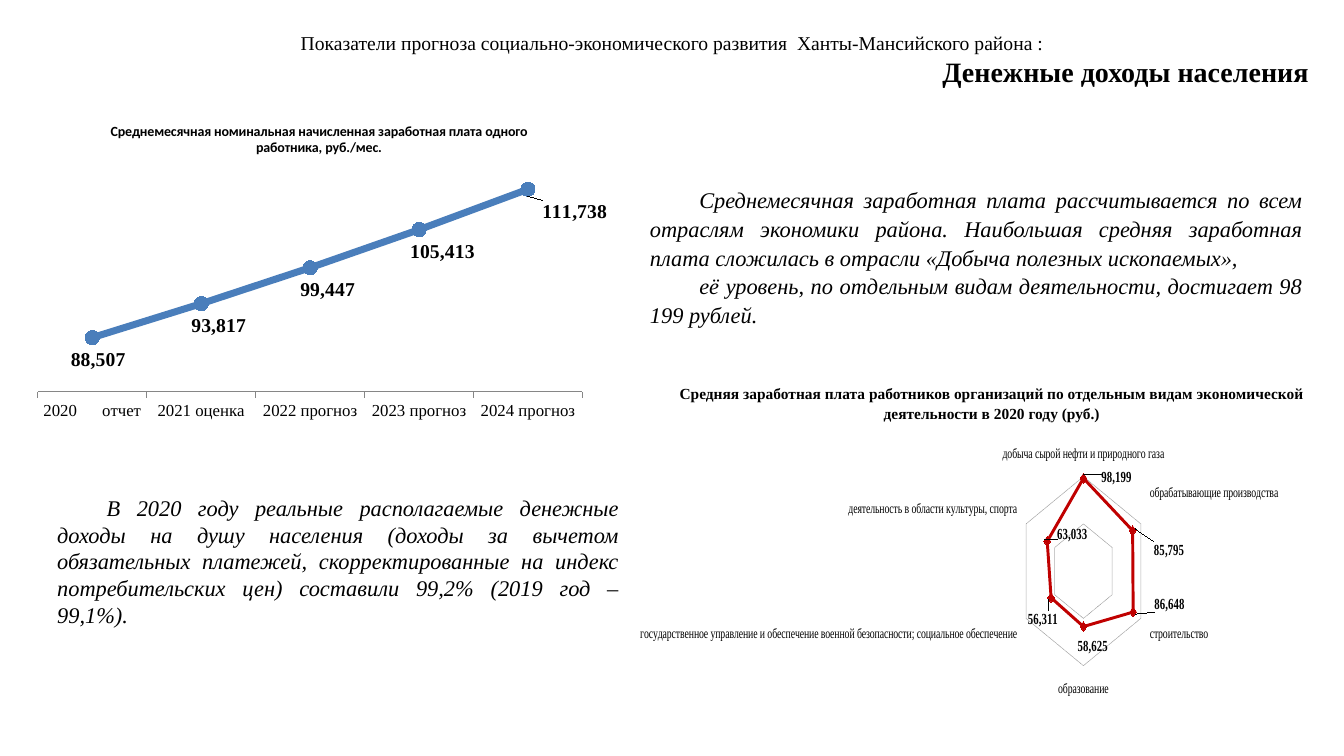
from dataclasses import dataclass

from lxml import etree
from pptx import Presentation
from pptx.chart.data import CategoryChartData
from pptx.dml.color import RGBColor
from pptx.enum.chart import XL_CHART_TYPE, XL_LABEL_POSITION, XL_MARKER_STYLE, XL_TICK_MARK
from pptx.enum.dml import MSO_LINE
from pptx.enum.text import MSO_ANCHOR, PP_ALIGN
from pptx.oxml.ns import qn
from pptx.util import Pt

LINE_CHART = XL_CHART_TYPE.LINE_MARKERS
RADAR_CHART = XL_CHART_TYPE.RADAR_MARKERS
BELOW = XL_LABEL_POSITION.BELOW
CIRCLE, DIAMOND = XL_MARKER_STYLE.CIRCLE, XL_MARKER_STYLE.DIAMOND
TICK_NONE, TICK_OUT = XL_TICK_MARK.NONE, XL_TICK_MARK.OUTSIDE
DOTTED = MSO_LINE.ROUND_DOT
CENTER, RIGHT, JUSTIFY = PP_ALIGN.CENTER, PP_ALIGN.RIGHT, PP_ALIGN.JUSTIFY
TOP, MIDDLE = MSO_ANCHOR.TOP, MSO_ANCHOR.MIDDLE


@dataclass(frozen=True)
class Theme:
    serif: str = "Times New Roman"
    sans: str = "Calibri"
    ink: RGBColor = RGBColor(0, 0, 0)
    blue: RGBColor = RGBColor(0x4A, 0x7E, 0xBB)
    red: RGBColor = RGBColor(0xC0, 0, 0)
    grey: RGBColor = RGBColor(0x86, 0x86, 0x86)
    heading: int = 20
    body: int = 16
    subject: int = 14
    axis: int = 12
    caption: int = 11
    small: int = 10


THEME = Theme()

WAGES = {
    "2020      отчет": 88507,
    "2021 оценка": 93817,
    "2022 прогноз": 99447,
    "2023 прогноз": 105413,
    "2024 прогноз": 111738,
}
SECTORS = {
    "добыча сырой нефти и природного газа": 98199,
    "обрабатывающие производства\n": 85795,
    "строительство": 86648,
    "образование": 58625,
    "государственное управление и обеспечение военной безопасности; социальное обеспечение": 56311,
    "деятельность в области культуры, спорта": 63033,
}
# Label shifts as fractions of the chart's width and height
WAGE_SHIFTS = [(0.01, 0), (0.03, 0), (0.03, 0), (0.04, 0), (0.08, 0)]
SECTOR_SHIFTS = [(0.07, 0.04), (0.04, 0.08), (0.04, -0.05),
                 (0.02, 0.01), (0.02, 0.03), (0.09, 0.01)]


def style_font(font, size, name=THEME.serif, bold=False, italic=False):
    font.name, font.size, font.bold, font.italic = name, Pt(size), bold, italic
    font.color.rgb = THEME.ink


def add_text(slide, box, lines, align, indent=0, spacing=1.0, anchor=TOP):
    """Each line is (text, size, bold, italic)."""
    frame = slide.shapes.add_textbox(*map(Pt, box)).text_frame
    frame.word_wrap = True
    frame.vertical_anchor = anchor
    frame.text = "\n".join(line[0] for line in lines)
    for paragraph, (_, size, bold, italic) in zip(frame.paragraphs, lines):
        paragraph.alignment = align
        paragraph.line_spacing = spacing
        if indent:
            paragraph._p.get_or_add_pPr().set("indent", str(Pt(indent)))
        style_font(paragraph.runs[0].font, size, bold=bold, italic=italic)
    return frame


def make_layout(**values):
    layout = etree.Element(qn("c:layout"))
    manual = etree.SubElement(layout, qn("c:manualLayout"))
    for tag, value in values.items():
        etree.SubElement(manual, qn(f"c:{tag}")).set("val", str(value))
    return layout


def place_plot(chart, x, y, w, h):
    area = chart._chartSpace.chart.plotArea
    for old in area.findall(qn("c:layout")):
        area.remove(old)
    area.insert(0, make_layout(layoutTarget="inner", xMode="edge", yMode="edge",
                               x=x, y=y, w=w, h=h))


def add_chart(slide, kind, box, points, plot_box, axis_size):
    data = CategoryChartData(number_format="#,##0")
    data.categories = list(points)
    data.add_series("Заработная плата", list(points.values()))
    chart = slide.shapes.add_chart(kind, *map(Pt, box), data).chart
    chart.has_legend = chart.has_title = False
    style_font(chart.font, THEME.small, THEME.sans)
    style_font(chart.category_axis.tick_labels.font, axis_size)
    chart.value_axis.visible = False
    place_plot(chart, *plot_box)
    return chart


def style_series(chart, color, width, marker, marker_size):
    series = chart.plots[0].series[0]
    series.smooth = False
    series.format.line.color.rgb = color
    series.format.line.width = Pt(width)
    series.marker.style, series.marker.size = marker, marker_size
    series.marker.format.fill.solid()
    series.marker.format.fill.fore_color.rgb = color
    series.marker.format.line.color.rgb = color
    return series


def label_points(series, size, shifts, position=None):
    for index, (x, y) in enumerate(shifts):
        label = series.points[index].data_label
        style_font(label.font, size, bold=True)
        if position is not None:
            label.position = position
        item = series._element.findall(".//" + qn("c:dLbl"))[index]
        item.insert(1, make_layout(x=x, y=y))


def add_wage_chart(slide):
    chart = add_chart(slide, LINE_CHART, (18.72, 77, 418.3, 228.2), WAGES,
                      (0.02, 0.19, 0.93, 0.7), THEME.axis)
    chart.plots[0].vary_by_categories = False
    chart.has_title = True
    title = chart.chart_title.text_frame
    title.text = ("Среднемесячная номинальная начисленная заработная плата "
                  "одного работника, руб./мес.")
    style_font(title.paragraphs[0].runs[0].font, THEME.small, THEME.sans, bold=True)
    chart.category_axis.major_tick_mark = TICK_OUT
    chart.category_axis.format.line.color.rgb = THEME.grey
    values = chart.value_axis
    values.minimum_scale, values.maximum_scale, values.major_unit = 80000, 115000, 10000
    values.has_major_gridlines = False
    series = style_series(chart, THEME.blue, 5, CIRCLE, 10)
    label_points(series, THEME.subject, WAGE_SHIFTS, BELOW)


def add_sector_chart(slide):
    chart = add_chart(slide, RADAR_CHART, (457.2, 264.2, 482.4, 266.4), SECTORS,
                      (0.37, 0.24, 0.28, 0.6), THEME.small)
    chart.category_axis.has_major_gridlines = False
    values = chart.value_axis
    values.minimum_scale, values.maximum_scale, values.major_unit = 0, 100000, 50000
    values.major_tick_mark = TICK_NONE
    values.has_major_gridlines = True
    rings = values.major_gridlines.format.line
    rings.color.rgb, rings.width, rings.dash_style = THEME.grey, Pt(0.5), DOTTED
    series = style_series(chart, THEME.red, 3, DIAMOND, 7)
    label_points(series, THEME.caption, SECTOR_SHIFTS)


def main():
    deck = Presentation()
    deck.slide_width, deck.slide_height = Pt(960), Pt(540)
    slide = deck.slides.add_slide(deck.slide_layouts[6])

    # Heading
    heading = add_text(slide, (11.5, 20.9, 937.4, 43.2), [
        ("Показатели прогноза социально-экономического развития  "
         "Ханты-Мансийского района :", THEME.subject, False, False),
        ("Денежные доходы населения", THEME.heading, True, False),
    ], CENTER, anchor=MIDDLE)
    heading.margin_left = heading.margin_right = Pt(14)
    heading.paragraphs[1].alignment = RIGHT

    # Charts
    add_wage_chart(slide)
    add_sector_chart(slide)

    # Commentary
    add_text(slide, (457.2, 128.2, 480.2, 110.9), [
        ("Среднемесячная заработная плата рассчитывается по всем отраслям "
         "экономики района. Наибольшая средняя заработная плата сложилась "
         "в отрасли «Добыча полезных ископаемых»,", THEME.body, False, True),
        ("её уровень, по отдельным видам деятельности, достигает 98 199 рублей.",
         THEME.body, False, True),
    ], JUSTIFY, indent=35.3, spacing=1.07)
    add_text(slide, (33.8, 349.2, 415.4, 104.4), [
        ("В 2020 году реальные располагаемые денежные доходы на душу населения "
         "(доходы за вычетом обязательных платежей, скорректированные на индекс "
         "потребительских цен) составили 99,2% (2019 год – 99,1%).",
         THEME.body, False, True),
    ], JUSTIFY, indent=35.3)

    # Caption of the sector chart
    add_text(slide, (472.3, 270, 472.3, 36), [
        ("Средняя заработная плата работников организаций по отдельным видам "
         "экономической деятельности в 2020 году (руб.)", THEME.caption, True, False),
    ], CENTER, spacing=1.07)

    deck.save("out.pptx")


if __name__ == "__main__":
    main()
